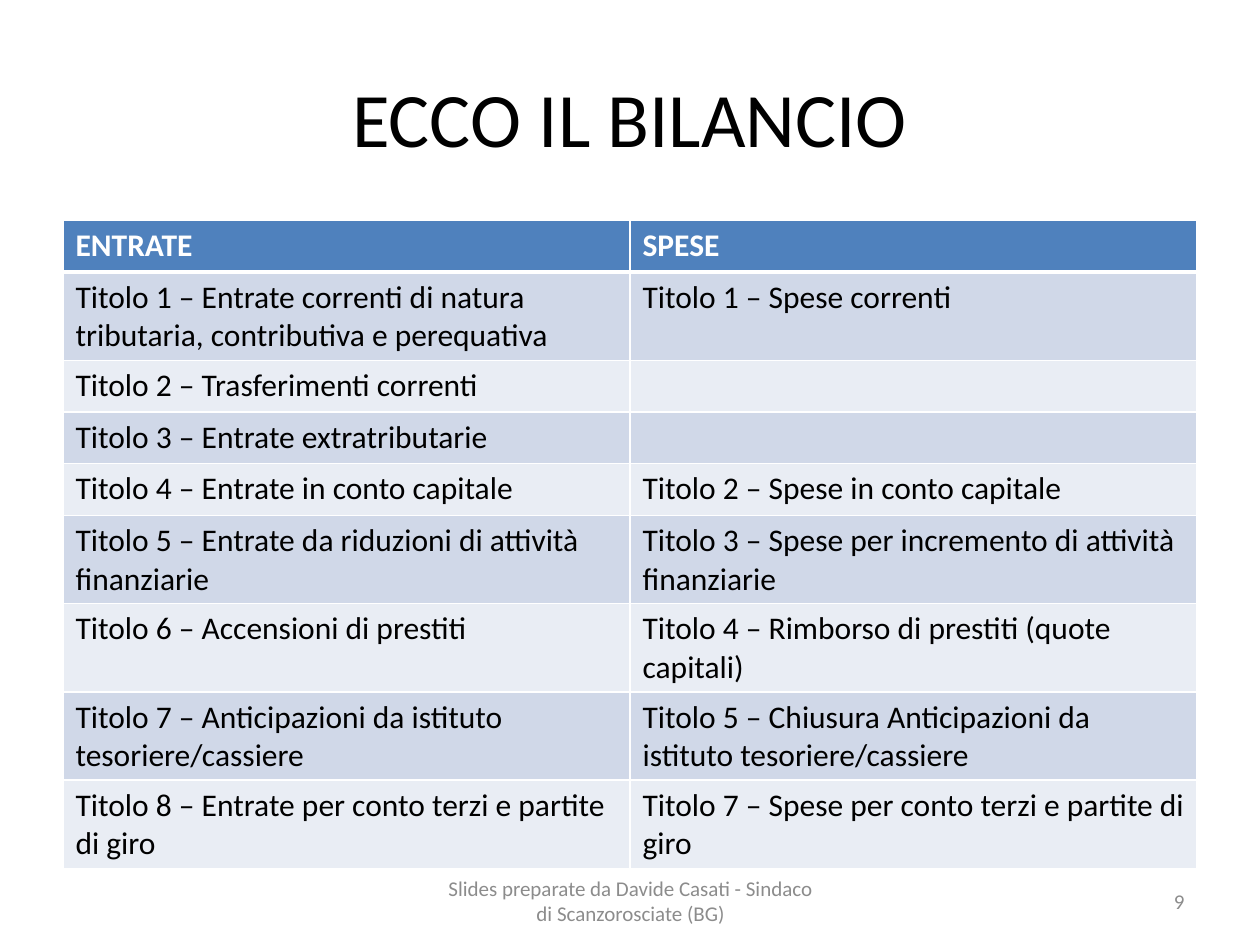
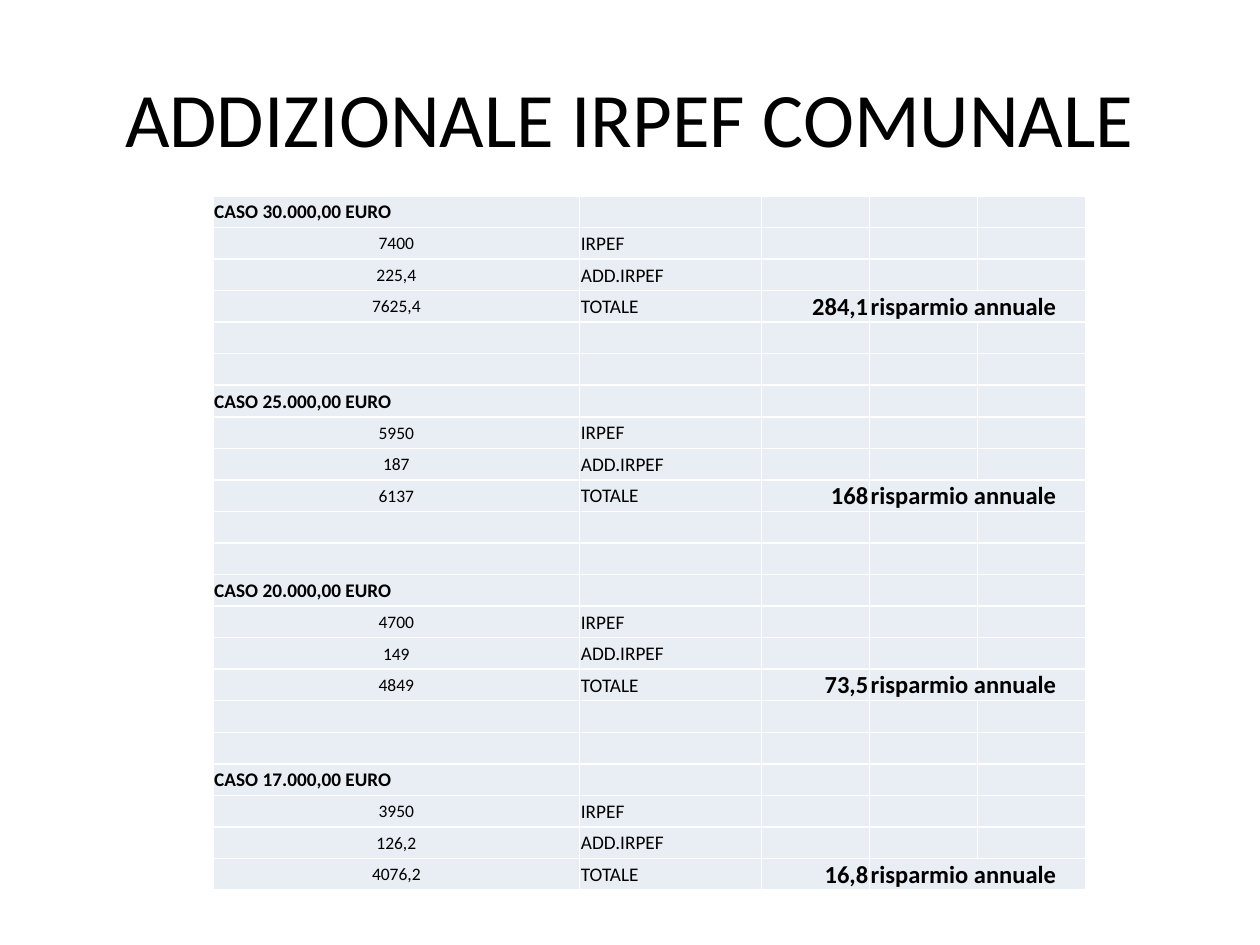
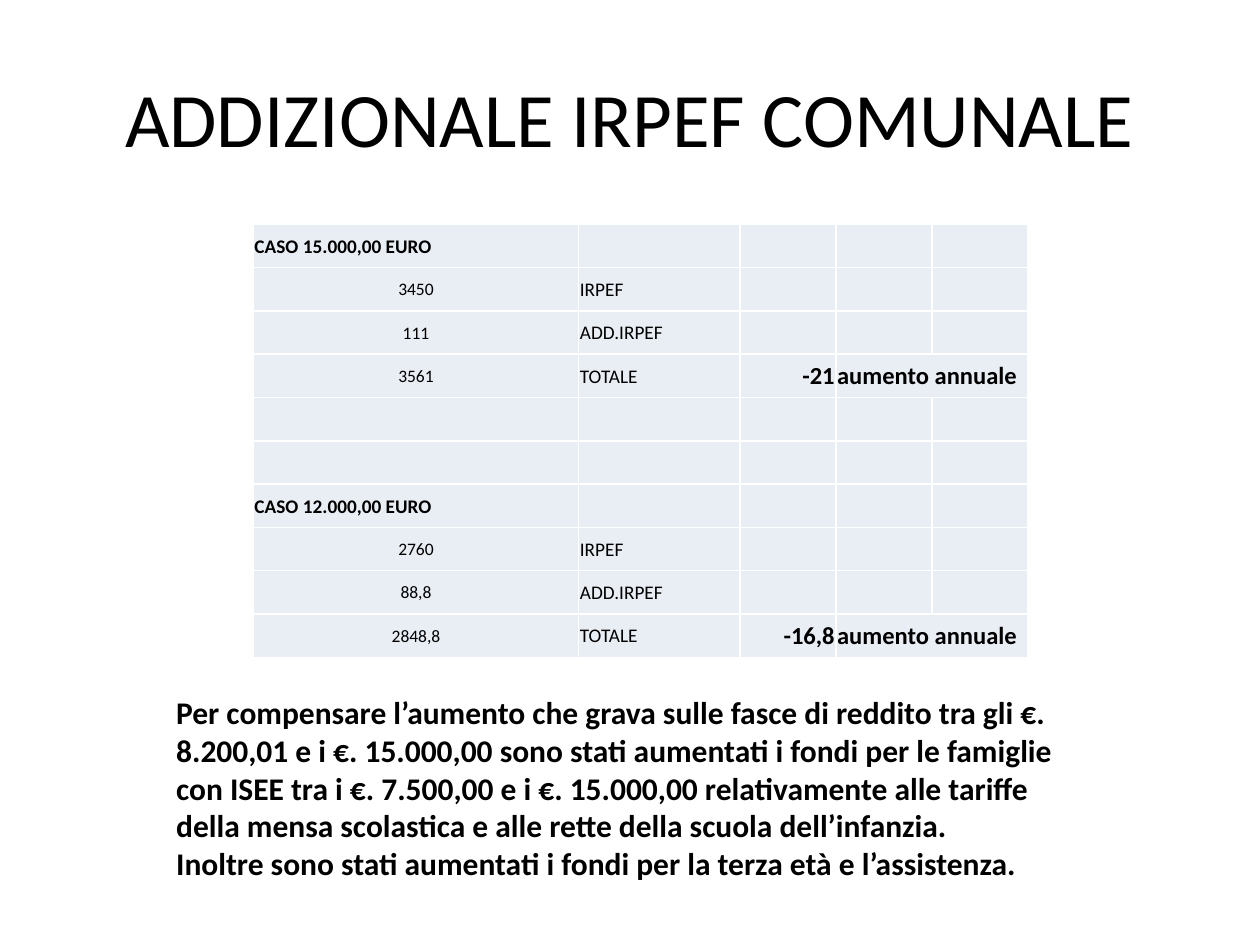
from dataclasses import dataclass
from itertools import accumulate
from typing import Sequence

from lxml.etree import SubElement
from pptx import Presentation
from pptx.dml.color import RGBColor
from pptx.enum.text import MSO_ANCHOR as Anchor, PP_ALIGN as Align
from pptx.oxml.ns import qn
from pptx.slide import Slide
from pptx.table import _Cell as TableCell
from pptx.text.text import TextFrame
from pptx.util import Emu, Inches, Pt

SLIDE_WIDTH, SLIDE_HEIGHT = Inches(10), Inches(7.5)
GRID_COLUMNS, GRID_ROWS = 100, 75

FONT = "Calibri"
BLACK, WHITE, GREY = "000000", "FFFFFF", "8C8C8C"
HEADER_BLUE, BAND_DARK, BAND_LIGHT = "4F81BD", "D0D8E8", "E9EDF4"
CASE_WEIGHTS = (42, 20.8, 12.4, 12.4, 12.4)
GAP_ROWS = 2


@dataclass(frozen=True)
class Area:
    column: float
    row: float
    columns: float
    rows: float


@dataclass(frozen=True)
class Entry:
    text: str = ""
    size: float = 10
    bold: bool = False
    align: Align = Align.LEFT
    color: str = BLACK
    span: int = 1


@dataclass(frozen=True)
class TaxCase:
    income: str
    irpef: str
    surcharge: str
    total: str
    difference: str


TITLE_AREA = Area(5, 3, 90, 12.5)
FOOTER_AREA = Area(34.2, 69.5, 31.7, 4)
NUMBER_AREA = Area(71.7, 69.5, 23.3, 4)
BUDGET_AREA = Area(5, 17.5, 90, 36.9)
SAVING_AREA = Area(16.9, 15.55, 69.3, 55.1)
INCREASE_AREA = Area(20.1, 17.8, 61.5, 34.4)
NOTE_AREA = Area(13, 54.5, 74, 19.2)

BUDGET = (
    ("ENTRATE", "SPESE"),
    ("Titolo 1 – Entrate correnti di natura tributaria, contributiva e perequativa",
     "Titolo 1 – Spese correnti"),
    ("Titolo 2 – Trasferimenti correnti", ""),
    ("Titolo 3 – Entrate extratributarie", ""),
    ("Titolo 4 – Entrate in conto capitale", "Titolo 2 – Spese in conto capitale"),
    ("Titolo 5 – Entrate da riduzioni di attività finanziarie",
     "Titolo 3 – Spese per incremento di attività finanziarie"),
    ("Titolo 6 – Accensioni di prestiti",
     "Titolo 4 – Rimborso di prestiti (quote capitali)"),
    ("Titolo 7 – Anticipazioni da istituto tesoriere/cassiere",
     "Titolo 5 – Chiusura Anticipazioni da istituto tesoriere/cassiere"),
    ("Titolo 8 – Entrate per conto terzi e partite di giro",
     "Titolo 7 – Spese per conto terzi e partite di giro"),
)
SAVING_CASES = (
    TaxCase("30.000,00", "7400", "225,4", "7625,4", "284,1"),
    TaxCase("25.000,00", "5950", "187", "6137", "168"),
    TaxCase("20.000,00", "4700", "149", "4849", "73,5"),
    TaxCase("17.000,00", "3950", "126,2", "4076,2", "16,8"),
)
INCREASE_CASES = (
    TaxCase("15.000,00", "3450", "111", "3561", "-21"),
    TaxCase("12.000,00", "2760", "88,8", "2848,8", "-16,8"),
)
NOTE = (
    "Per compensare l’aumento che grava sulle fasce di reddito tra gli €. 8.200,01 "
    "e i €. 15.000,00 sono stati aumentati i fondi per le famiglie con ISEE tra i "
    "€. 7.500,00 e i €. 15.000,00 relativamente alle tariffe della mensa scolastica "
    "e alle rette della scuola dell’infanzia.",
    "Inoltre sono stati aumentati i fondi per la terza età e l’assistenza.",
)


def across(columns: float) -> Emu:
    return Emu(round(SLIDE_WIDTH * columns / GRID_COLUMNS))


def down(rows: float) -> Emu:
    return Emu(round(SLIDE_HEIGHT * rows / GRID_ROWS))


def place(area: Area) -> tuple[Emu, Emu, Emu, Emu]:
    return across(area.column), down(area.row), across(area.columns), down(area.rows)


def rgb(color: str) -> RGBColor:
    return RGBColor.from_string(color)


def write(frame: TextFrame, *lines: str, size: float, bold: bool = False,
          color: str = BLACK, align: Align = Align.LEFT) -> None:
    for index, line in enumerate(lines):
        paragraph = frame.add_paragraph() if index else frame.paragraphs[0]
        paragraph.alignment = align
        if not line:
            SubElement(paragraph._p, qn("a:endParaRPr"), sz=str(round(size * 100)))
            continue
        run = paragraph.add_run()
        run.text = line
        run.font.name = FONT
        run.font.size = Pt(size)
        run.font.bold = bold
        run.font.color.rgb = rgb(color)


def add_text(slide: Slide, area: Area, *lines: str, size: float, bold: bool = False,
             color: str = BLACK, align: Align = Align.LEFT,
             anchor: Anchor = Anchor.MIDDLE) -> None:
    frame = slide.shapes.add_textbox(*place(area)).text_frame
    frame.word_wrap = True
    frame.vertical_anchor = anchor
    write(frame, *lines, size=size, bold=bold, color=color, align=align)


def add_border(cell: TableCell, side: str, width: float) -> None:
    line = SubElement(cell._tc.get_or_add_tcPr(), qn(f"a:ln{side}"), w=str(Pt(width)))
    SubElement(SubElement(line, qn("a:solidFill")), qn("a:srgbClr"), val=WHITE)


def add_table(slide: Slide, area: Area, entries: Sequence[Sequence[Entry]],
              weights: Sequence[float], fills: Sequence[str],
              compact: bool = False, header: bool = False) -> None:
    table = slide.shapes.add_table(len(entries), len(weights), *place(area)).table
    table.first_row = header
    table.horz_banding = False
    for column, weight in zip(table.columns, weights):
        column.width = across(area.columns * weight / sum(weights))
    for row in table.rows:
        row.height = down(area.rows / len(entries))
    for row_index, row_entries in enumerate(entries):
        for cell in table.rows[row_index].cells:
            for side in "LRTB":
                under_header = header and (row_index, side) in ((0, "B"), (1, "T"))
                add_border(cell, side, 3 if under_header else 1)
            cell.fill.solid()
            cell.fill.fore_color.rgb = rgb(fills[row_index])
            if compact:
                cell.vertical_anchor = Anchor.MIDDLE
                cell.margin_left = cell.margin_right = cell.margin_top = Inches(0.01)
                cell.margin_bottom = 0
        starts = accumulate((entry.span for entry in row_entries[:-1]), initial=0)
        for start, entry in zip(starts, row_entries):
            cell = table.cell(row_index, start)
            if entry.span > 1:
                cell.merge(table.cell(row_index, start + entry.span - 1))
            write(cell.text_frame, entry.text, size=entry.size, bold=entry.bold,
                  color=entry.color, align=entry.align)


def case_rows(case: TaxCase, outcome: str) -> list[list[Entry]]:
    def amount(value: str, label: str) -> list[Entry]:
        return [Entry(value, align=Align.CENTER), Entry(label, 11)]

    blank = Entry()
    return [
        [Entry(f"CASO {case.income} EURO", 11, bold=True)] + [blank] * 4,
        amount(case.irpef, "IRPEF") + [blank] * 3,
        amount(case.surcharge, "ADD.IRPEF") + [blank] * 3,
        amount(case.total, "TOTALE") + [
            Entry(case.difference, 14, bold=True, align=Align.RIGHT),
            Entry(outcome, 14, bold=True, span=2),
        ],
    ]


def add_cases(slide: Slide, area: Area, cases: Sequence[TaxCase], outcome: str) -> None:
    entries: list[list[Entry]] = []
    for case in cases:
        if entries:
            entries += [[Entry()] * len(CASE_WEIGHTS)] * GAP_ROWS
        entries += case_rows(case, outcome)
    add_table(slide, area, entries, CASE_WEIGHTS, [BAND_LIGHT] * len(entries), compact=True)


def add_budget(slide: Slide) -> None:
    heading, *titles = BUDGET
    entries = [[Entry(text, 18, bold=True, color=WHITE) for text in heading]]
    entries += [[Entry(text, 18) for text in pair] for pair in titles]
    bands = [(BAND_DARK, BAND_LIGHT)[index % 2] for index in range(len(titles))]
    add_table(slide, BUDGET_AREA, entries, (1, 1), [HEADER_BLUE, *bands], header=True)


def main() -> None:
    deck = Presentation()
    deck.slide_width, deck.slide_height = SLIDE_WIDTH, SLIDE_HEIGHT

    def titled_slide(title: str) -> Slide:
        slide = deck.slides.add_slide(deck.slide_layouts[6])
        add_text(slide, TITLE_AREA, title, size=44, align=Align.CENTER)
        return slide

    budget = titled_slide("ECCO IL BILANCIO")
    add_budget(budget)
    add_text(budget, NUMBER_AREA, "9", size=12, color=GREY, align=Align.RIGHT)
    add_text(budget, FOOTER_AREA,
             "Slides preparate da Davide Casati - Sindaco di Scanzorosciate (BG)",
             size=12, color=GREY, align=Align.CENTER)

    savings = titled_slide("ADDIZIONALE IRPEF COMUNALE")
    add_cases(savings, SAVING_AREA, SAVING_CASES, "risparmio annuale")

    increases = titled_slide("ADDIZIONALE IRPEF COMUNALE")
    add_cases(increases, INCREASE_AREA, INCREASE_CASES, "aumento annuale")
    add_text(increases, NOTE_AREA, *NOTE, size=18, bold=True, anchor=Anchor.TOP)

    deck.save("out.pptx")


if __name__ == "__main__":
    main()
